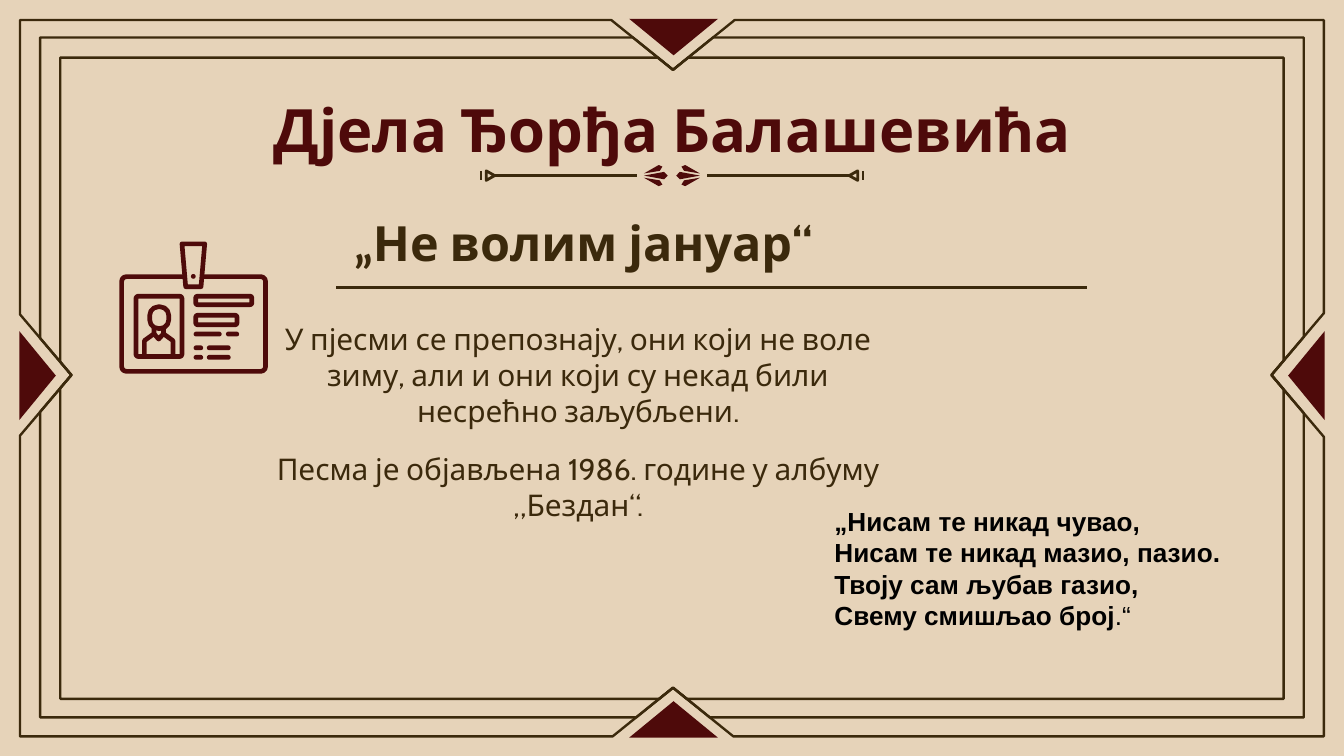
from lxml.etree import SubElement
from pptx import Presentation
from pptx.dml.color import RGBColor
from pptx.enum.shapes import MSO_CONNECTOR, MSO_SHAPE
from pptx.enum.text import MSO_ANCHOR, MSO_AUTO_SIZE, PP_ALIGN
from pptx.oxml.ns import qn
from pptx.util import Cm, Pt

SAND, BROWN, WINE, BLACK = "E6D3B9", "3B290C", "4E0A0A", "000000"


def color(value):
    return RGBColor.from_string(value)


def write(paragraph, text, font="Cabin", size=16, ink=BROWN, bold=False,
          align=PP_ALIGN.CENTER, after=0):
    paragraph.alignment = align
    paragraph.line_spacing = 1
    paragraph.space_before = Pt(0)
    paragraph.space_after = Pt(after)
    run = paragraph.add_run()
    run.text = text
    run.font.name, run.font.size, run.font.bold = font, Pt(size), bold
    run.font.color.rgb = color(ink)


class Artist:
    """Holds the slide and the drawing style; all lengths are in centimetres."""

    def __init__(self, slide):
        self.slide = slide
        self.shapes = slide.shapes
        slide.background.fill.solid()
        slide.background.fill.fore_color.rgb = color(SAND)

    def paint(self, shape, fill, line, width):
        shape.shadow.inherit = False
        if fill:
            shape.fill.solid()
            shape.fill.fore_color.rgb = color(fill)
        else:
            shape.fill.background()
        if line:
            shape.line.color.rgb = color(line)
            shape.line.width = Pt(width)
        else:
            shape.line.fill.background()
        return shape

    def outline(self, points, fill=None, line=None, width=1.5, closed=True):
        corners = [(Cm(x), Cm(y)) for x, y in points]
        builder = self.shapes.build_freeform(*corners[0])
        builder.add_line_segments(corners[1:], close=closed)
        return self.paint(builder.convert_to_shape(), fill, line, width)

    def preset(self, kind, x, y, w, h, fill=None, line=None, width=2.5):
        shape = self.shapes.add_shape(kind, Cm(x), Cm(y), Cm(w), Cm(h))
        return self.paint(shape, fill, line, width)

    def rounded(self, x, y, w, h, radius, **style):
        shape = self.preset(MSO_SHAPE.ROUNDED_RECTANGLE, x, y, w, h, **style)
        shape.adjustments[0] = radius

    def rule(self, x1, y1, x2, y2, ink=BROWN, width=1.5):
        line = self.shapes.add_connector(
            MSO_CONNECTOR.STRAIGHT, Cm(x1), Cm(y1), Cm(x2), Cm(y2))
        line.line.color.rgb = color(ink)
        line.line.width = Pt(width)
        SubElement(line._element.spPr, qn("a:effectLst"))

    def place(self, holder, x, y, w, h, anchor=MSO_ANCHOR.TOP, inset=0.25):
        holder.left, holder.top, holder.width, holder.height = map(Cm, (x, y, w, h))
        frame = holder.text_frame
        frame.word_wrap = True
        frame.auto_size = MSO_AUTO_SIZE.NONE
        frame.vertical_anchor = anchor
        frame.margin_left = frame.margin_right = Cm(0.25)
        frame.margin_top = frame.margin_bottom = Cm(inset)
        return frame

    def textbox(self, x, y, w, h, **layout):
        box = self.shapes.add_textbox(Cm(x), Cm(y), Cm(w), Cm(h))
        return self.place(box, x, y, w, h, **layout)


def draw_frame(artist):
    # Three nested outlines share the four notch tips
    mid_x, mid_y = 12.72, 7.09
    tip_left, tip_top, tip_right, tip_bottom = 1.35, 1.32, 24.03, 13.0
    slope_x, slope_y = 1.24, 1.18
    for left, top, right, bottom in ((0.38, 0.38, 25.02, 13.92),
                                     (0.76, 0.71, 24.64, 13.56),
                                     (1.14, 1.09, 24.26, 13.21)):
        up, down = (tip_top - top) * slope_x, (bottom - tip_bottom) * slope_x
        west, east = (tip_left - left) * slope_y, (right - tip_right) * slope_y
        artist.outline([
            (left, top), (mid_x - up, top), (mid_x, tip_top), (mid_x + up, top),
            (right, top), (right, mid_y - east), (tip_right, mid_y),
            (right, mid_y + east), (right, bottom), (mid_x + down, bottom),
            (mid_x, tip_bottom), (mid_x - down, bottom), (left, bottom),
            (left, mid_y + west), (tip_left, mid_y), (left, mid_y - west),
        ], line=BROWN, width=1.28)

    # Triangles point inwards from each side
    w, h = 1.68, 0.69
    for x, y, turn in ((12.73, 0.7, 180), (12.73, 13.6, 0),
                       (24.69, 7.1, 270), (0.71, 7.1, 90)):
        wedge = artist.preset(MSO_SHAPE.ISOSCELES_TRIANGLE,
                              x - w / 2, y - h / 2, w, h, fill=WINE)
        wedge.rotation = turn


def draw_divider(artist):
    axis, level = 12.7, 3.32
    arrow = [(9.19, 3.23), (9.19, 3.41), (9.35, level)]
    middle_petal = [(12.55, 3.25), (12.17, level), (12.55, 3.39), (12.62, level)]
    upper_petal = [(12.45, 3.12), (12.17, 3.28), (12.47, 3.23), (12.52, 3.15)]
    lower_petal = [(x, 2 * level - y) for x, y in upper_petal]
    for flipped in (False, True):
        def side(x):
            return 2 * axis - x if flipped else x
        artist.rule(side(9.35), level, side(12.04), level)
        artist.rule(side(9.09), 3.23, side(9.09), 3.41)
        artist.outline([(side(x), y) for x, y in arrow], line=BROWN)
        for petal in (middle_petal, upper_petal, lower_petal):
            artist.outline([(side(x), y) for x, y in petal], fill=WINE)


def draw_badge(artist):
    # Card, photo frame, head and the two wide fields
    for x, y, w, h, radius in ((2.3, 5.23, 2.72, 1.79, 0.05),
                               (2.57, 5.6, 0.87, 1.14, 0.05),
                               (2.83, 5.8, 0.36, 0.41, 0.45),
                               (3.7, 5.6, 1.06, 0.16, 0.2),
                               (3.7, 5.96, 0.78, 0.18, 0.2)):
        artist.rounded(x, y, w, h, radius, line=WINE)

    # Shoulders and collar
    artist.outline([(2.73, 6.74), (2.73, 6.44), (2.91, 6.31), (2.91, 6.2)],
                   line=WINE, width=2.5, closed=False)
    artist.outline([(3.27, 6.74), (3.27, 6.44), (3.09, 6.31), (3.09, 6.2)],
                   line=WINE, width=2.5, closed=False)
    artist.outline([(2.91, 6.31), (3, 6.41), (3.09, 6.31)],
                   line=WINE, width=2.5, closed=False)

    # Short lines of writing
    for y, dashes in ((6.27, ((3.66, 0.53), (4.27, 0.25))),
                      (6.53, ((3.66, 0.18), (3.91, 0.45))),
                      (6.71, ((3.66, 0.18), (3.91, 0.45)))):
        for x, length in dashes:
            artist.rounded(x, y, length, 0.09, 0.5, fill=WINE)

    # Clip
    artist.outline([(3.44, 4.61), (3.87, 4.61), (3.8, 5.42), (3.51, 5.42)],
                   fill=SAND, line=WINE, width=2.5)
    artist.preset(MSO_SHAPE.OVAL, 3.61, 5.18, 0.09, 0.09, fill=WINE)


def main():
    deck = Presentation()
    deck.slide_width, deck.slide_height = Cm(25.4), Cm(14.29)
    slide = deck.slides.add_slide(deck.slide_layouts[1])
    artist = Artist(slide)
    draw_frame(artist)
    draw_divider(artist)
    draw_badge(artist)

    # Title
    title = artist.place(slide.shapes.title, 2.01, 1.5, 21.39, 1.6)
    write(title.paragraphs[0], "Дјела Ђорђа Балашевића", size=32, ink=WINE, bold=True)

    # Song name with its underline
    song = artist.textbox(5.05, 3.53, 11.96, 1.85, anchor=MSO_ANCHOR.BOTTOM)
    for part, font in (("„", "Lato"), ("Не волим јануар“", "Cabin")):
        write(song.paragraphs[0], part, font=font, size=26, bold=True)
    artist.rule(6.35, 5.44, 20.55, 5.44)

    # About the song
    about = artist.place(slide.placeholders[1], 4.95, 5.82, 11.96, 5.23)
    facts = ("У пјесми се препознају, они који не воле зиму, али и они који су "
             "некад били несрећно заљубљени.",
             "Песма је објављена 1986. године у албуму „Бездан“.")
    for number, fact in enumerate(facts):
        paragraph = about.add_paragraph() if number else about.paragraphs[0]
        properties = paragraph._p.get_or_add_pPr()
        properties.set("marL", "0")
        properties.set("indent", "0")
        SubElement(properties, qn("a:buNone"))
        write(paragraph, fact, after=12)

    # Verse
    verse = artist.textbox(15.52, 9.42, 9.19, 2.64, inset=0.13)
    lines = ("„Нисам те никад чувао,", "Нисам те никад мазио, пазио.",
             "Твоју сам љубав газио,", "Свему смишљао број")
    style = dict(font="Arial", size=14, ink=BLACK, align=PP_ALIGN.LEFT)
    for number, line in enumerate(lines):
        paragraph = verse.add_paragraph() if number else verse.paragraphs[0]
        write(paragraph, line, bold=True, **style)
    write(paragraph, ".“", **style)

    deck.save("out.pptx")


if __name__ == "__main__":
    main()
